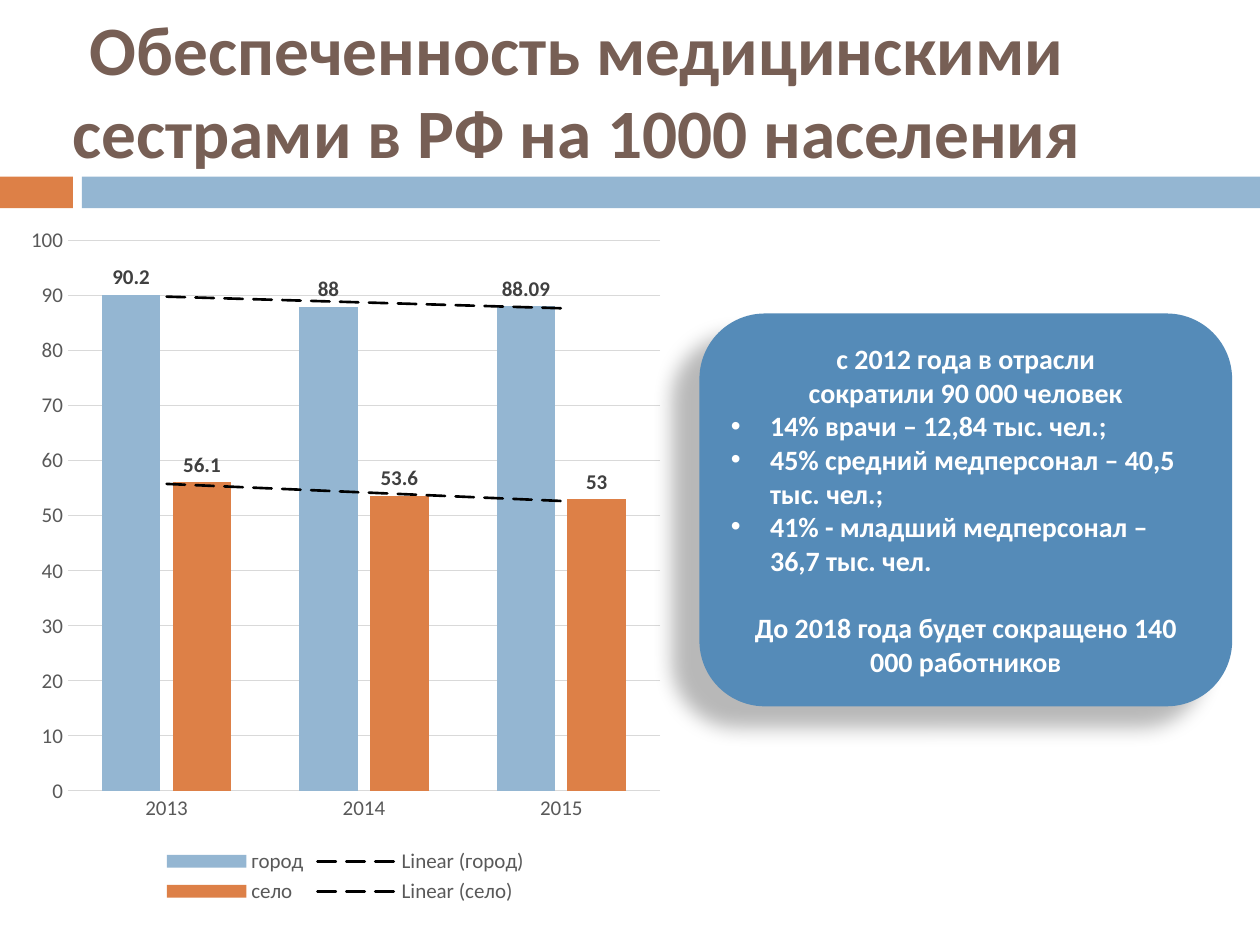
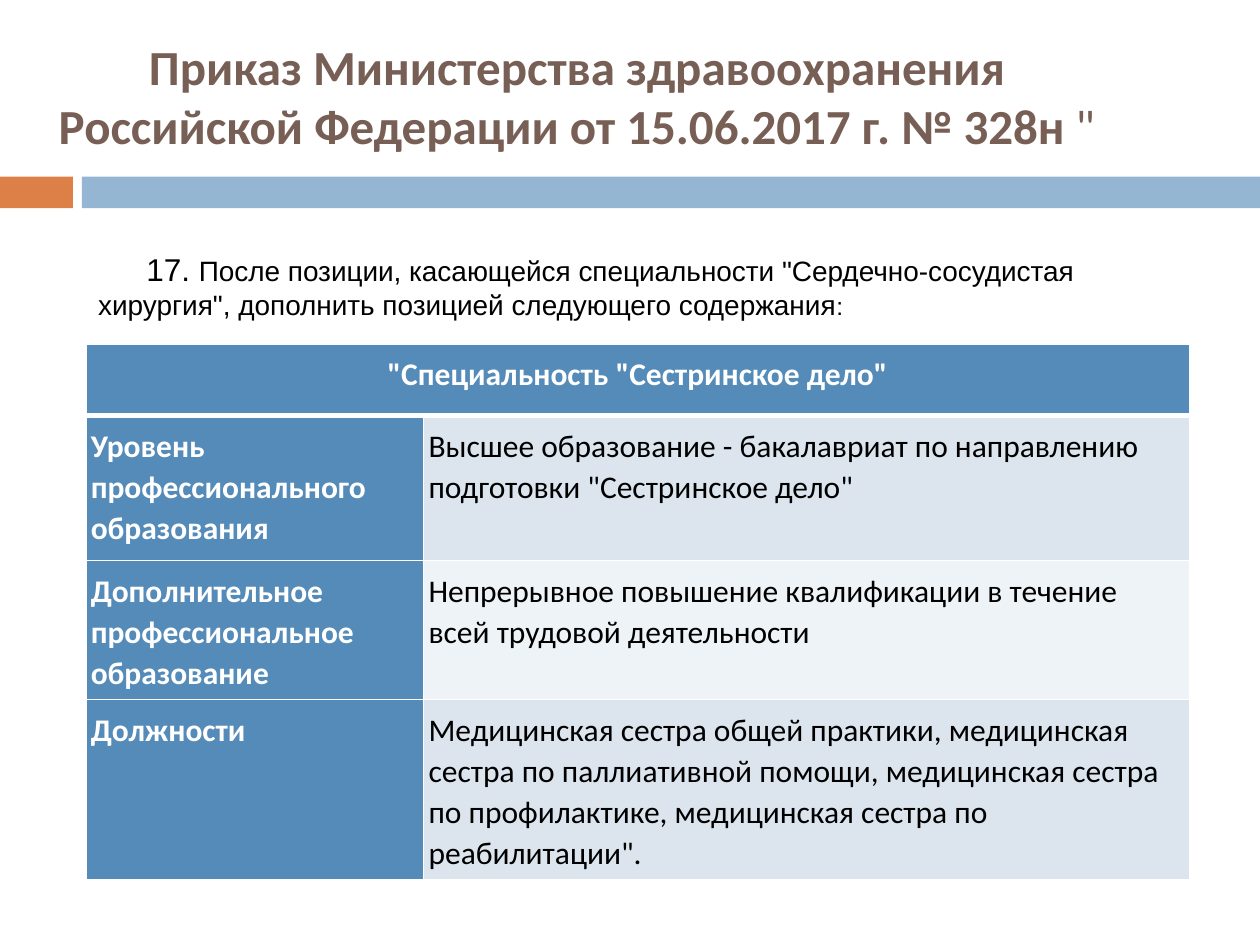
"""Builds two slides on nursing staff in Russia: a chart with a callout and a table."""
from pptx import Presentation
from pptx.chart.data import CategoryChartData as ChartData
from pptx.dml.color import RGBColor as Rgb
from pptx.enum.chart import XL_CHART_TYPE as Kind, XL_LABEL_POSITION as Spot
from pptx.enum.chart import XL_LEGEND_POSITION as Side, XL_TICK_MARK as Tick
from pptx.enum.shapes import MSO_SHAPE as Form
from pptx.enum.text import MSO_ANCHOR as Anchor, PP_ALIGN as Align
from pptx.oxml import parse_xml as to_xml
from pptx.oxml.ns import nsdecls
from pptx.util import Cm, Pt

BLUE = Rgb(0x94, 0xB6, 0xD2)
DEEP = Rgb(0x55, 0x8B, 0xB8)
ORANGE = Rgb(0xDD, 0x80, 0x47)
BROWN = Rgb(0x77, 0x5F, 0x55)
WHITE = Rgb(0xFF, 0xFF, 0xFF)
BLACK = Rgb(0, 0, 0)
GREY = Rgb(0x59, 0x59, 0x59)
DARK = Rgb(0x40, 0x40, 0x40)
RULE = Rgb(0xD9, 0xD9, 0xD9)
TINTS = [Rgb(0xDC, 0xE5, 0xEE), Rgb(0xEE, 0xF3, 0xF7)]
FONT = "Calibri"

BANDS = [(0, 1.47, ORANGE), (1.65, 23.75, BLUE)]
STAFF_TITLE = [("Обеспеченность медицинскими сестрами в РФ на 1000 населения", True)]
ORDER_TITLE = [
    ("Приказ Министерства здравоохранения Российской Федерации от 15.06.2017 г. № 328н ", True),
    ('"', False),
]
YEARS = ["2013", "2014", "2015"]
RATES = [("город", (90.2, 88, 88.09), BLUE), ("село", (56.1, 53.6, 53), ORANGE)]
CUTS = [
    ("с 2012 года в отрасли", False, 0),
    ("сократили 90 000 человек", False, 0),
    ("14% врачи – 12,84 тыс. чел.;", True, 0),
    ("45% средний медперсонал – 40,5 тыс. чел.;", True, 0),
    ("41% - младший медперсонал – 36,7 тыс. чел.", True, 0),
    ("До 2018 года будет сокращено 140 000 работников", False, 19.5),
]
INTRO = [
    ("17. ", 18),
    ('После позиции, касающейся специальности "Сердечно-сосудистая хирургия", '
     "дополнить позицией следующего содержания", 16),
    (":", 14),
]
HEAD = '"Специальность "Сестринское дело"'
ROWS = [
    ("Уровень профессионального образования",
     'Высшее образование - бакалавриат по направлению подготовки "Сестринское дело"'),
    ("Дополнительное профессиональное образование",
     "Непрерывное повышение квалификации в течение всей трудовой деятельности"),
    ("Должности",
     "Медицинская сестра общей практики, медицинская сестра по паллиативной помощи, "
     'медицинская сестра по профилактике, медицинская сестра по реабилитации".'),
]
WIDTHS = [6.81, 15.44]
HEIGHTS = [1.45, 2.92, 2.39, 3.2]


def box(*sides):
    return [Cm(side) for side in sides]


def style(font, size, color, bold=False, name=FONT):
    font.name, font.size, font.bold = name, Pt(size), bold
    font.color.rgb = color


def write(para, text, size, color, bold=False, name=FONT):
    run = para.add_run()
    run.text = text
    style(run.font, size, color, bold, name)


def add_form(slide, form, place, color):
    shape = slide.shapes.add_shape(form, *box(*place))
    shape.shadow.inherit = False
    shape.fill.solid()
    shape.fill.fore_color.rgb = color
    shape.line.fill.background()
    return shape


def add_frame(slide, place, anchor):
    frame = slide.shapes.add_textbox(*box(*place)).text_frame
    frame.word_wrap = True
    frame.vertical_anchor = anchor
    return frame


def add_slide(deck, title, top, size):
    slide = deck.slides.add_slide(deck.slide_layouts[6])
    for left, width, color in BANDS:
        add_form(slide, Form.RECTANGLE, (left, 3.56, width, 0.8), color).height = Cm(0.64)
    para = add_frame(slide, (0.3, top, 22.66, 2.74), Anchor.MIDDLE).paragraphs[0]
    para.alignment = Align.CENTER
    for text, bold in title:
        write(para, text, size, BROWN, bold)
    return slide


def add_trend(series):
    trend = to_xml(
        f'<c:trendline {nsdecls("c", "a")}><c:spPr><a:ln w="{Pt(1.5)}" cap="rnd">'
        f'<a:solidFill><a:srgbClr val="{BLACK}"/></a:solidFill><a:prstDash val="lgDash"/>'
        '</a:ln></c:spPr><c:trendlineType val="linear"/><c:dispRSqr val="0"/>'
        '<c:dispEq val="0"/></c:trendline>')
    series._element.find("{*}cat").addprevious(trend)


def add_rates(slide):
    data = ChartData()
    data.categories = YEARS
    for name, vals, _ in RATES:
        data.add_series(name, vals)
    place = box(0.36, 4.32, 13.21, 14)
    chart = slide.shapes.add_chart(Kind.COLUMN_CLUSTERED, *place, data).chart
    chart.has_title = False
    style(chart.font, 10, BLACK)
    chart.has_legend = True
    chart.legend.position = Side.BOTTOM
    chart.legend.include_in_layout = False
    style(chart.legend.font, 12, GREY)
    years, scale = chart.category_axis, chart.value_axis
    for axis in (years, scale):
        axis.major_tick_mark = axis.minor_tick_mark = Tick.NONE
        style(axis.tick_labels.font, 12, GREY)
    scale.minimum_scale, scale.maximum_scale, scale.major_unit = 0, 100, 10
    scale.format.line.fill.background()
    for line in (years.format.line, scale.major_gridlines.format.line):
        line.color.rgb = RULE
        line.width = Pt(0.75)
    plot = chart.plots[0]
    plot.gap_width, plot.overlap, plot.vary_by_categories = 116, -21, False
    for series, (_, _, color) in zip(plot.series, RATES):
        series.format.fill.solid()
        series.format.fill.fore_color.rgb = color
        series.invert_if_negative = False
        labels = series.data_labels
        labels.show_value = True
        labels.position = Spot.OUTSIDE_END
        style(labels.font, 12, DARK, True)
        add_trend(series)


def add_cuts(slide):
    card = add_form(slide, Form.ROUNDED_RECTANGLE, (14.1, 6.32, 10.74, 7.92), DEEP)
    card._element.spPr.find("{*}effectLst").append(to_xml(
        f'<a:outerShdw {nsdecls("a")} blurRad="{Pt(11.8)}" dist="{Pt(19.7)}" '
        f'dir="{141 * 60000}" algn="ctr" rotWithShape="0"><a:srgbClr val="{BLACK}">'
        '<a:alpha val="28000"/></a:srgbClr></a:outerShdw>'))
    frame = card.text_frame
    frame.word_wrap = True
    frame.vertical_anchor = Anchor.MIDDLE
    for num, (text, listed, gap) in enumerate(CUTS):
        para = frame.add_paragraph() if num else frame.paragraphs[0]
        para.alignment = Align.LEFT if listed else Align.CENTER
        if gap:
            para.space_before = Pt(gap)
        if listed:
            props = para._p.get_or_add_pPr()
            props.set("marL", str(Cm(0.79)))
            props.set("indent", str(-Cm(0.79)))
            props.append(to_xml(f'<a:buFont {nsdecls("a")} typeface="Arial"/>'))
            props.append(to_xml(f'<a:buChar {nsdecls("a")} char="•"/>'))
        write(para, text, 16, WHITE, True)


def add_intro(slide):
    frame = add_frame(slide, (1.73, 4.85, 22.28, 2.39), Anchor.TOP)
    frame.margin_top = Cm(0.19)
    para = frame.paragraphs[0]
    props = para._p.get_or_add_pPr()
    props.set("marL", "0")
    props.set("indent", str(Cm(0.97)))
    for text, size in INTRO:
        write(para, text, size, BLACK, name="Arial")


def fill_cell(cell, text, fill, color, bold, top, low):
    cell.margin_left = cell.margin_right = Cm(0.1)
    cell.margin_top = cell.margin_bottom = Cm(0.18)
    cell.fill.solid()
    cell.fill.fore_color.rgb = fill
    props = cell._tc.get_or_add_tcPr()
    for num, (side, width) in enumerate(zip("LRTB", (1, 1, top, low))):
        props.insert(num, to_xml(
            f'<a:ln{side} {nsdecls("a")} w="{Pt(width)}"><a:solidFill>'
            f'<a:srgbClr val="{WHITE}"/></a:solidFill></a:ln{side}>'))
    if text:
        para = cell.text_frame.paragraphs[0]
        para.line_spacing = 1.07
        write(para, text, 18, color, bold)


def add_order(slide):
    place = box(1.73, 6.93, sum(WIDTHS), sum(HEIGHTS))
    table = slide.shapes.add_table(len(HEIGHTS), len(WIDTHS), *place).table
    for col, width in zip(table.columns, WIDTHS):
        col.width = Cm(width)
    for row, height in zip(table.rows, HEIGHTS):
        row.height = Cm(height)
    table.cell(0, 0).merge(table.cell(0, 1))
    for col, text in enumerate((HEAD, "")):
        fill_cell(table.cell(0, col), text, DEEP, WHITE, True, 1, 3)
    table.cell(0, 0).text_frame.paragraphs[0].alignment = Align.CENTER
    for num, (name, text) in enumerate(ROWS, 1):
        top = 3 if num == 1 else 1
        fill_cell(table.cell(num, 0), name, DEEP, WHITE, True, top, 1)
        fill_cell(table.cell(num, 1), text, TINTS[(num - 1) % 2], BLACK, False, top, 1)


def main():
    deck = Presentation()
    deck.slide_width, deck.slide_height = box(25.4, 19.05)
    staff = add_slide(deck, STAFF_TITLE, 0.43, 39.6)
    add_rates(staff)
    add_cuts(staff)
    order = add_slide(deck, ORDER_TITLE, 0.56, 28)
    add_order(order)
    add_intro(order)
    deck.save("out.pptx")


if __name__ == "__main__":
    main()
